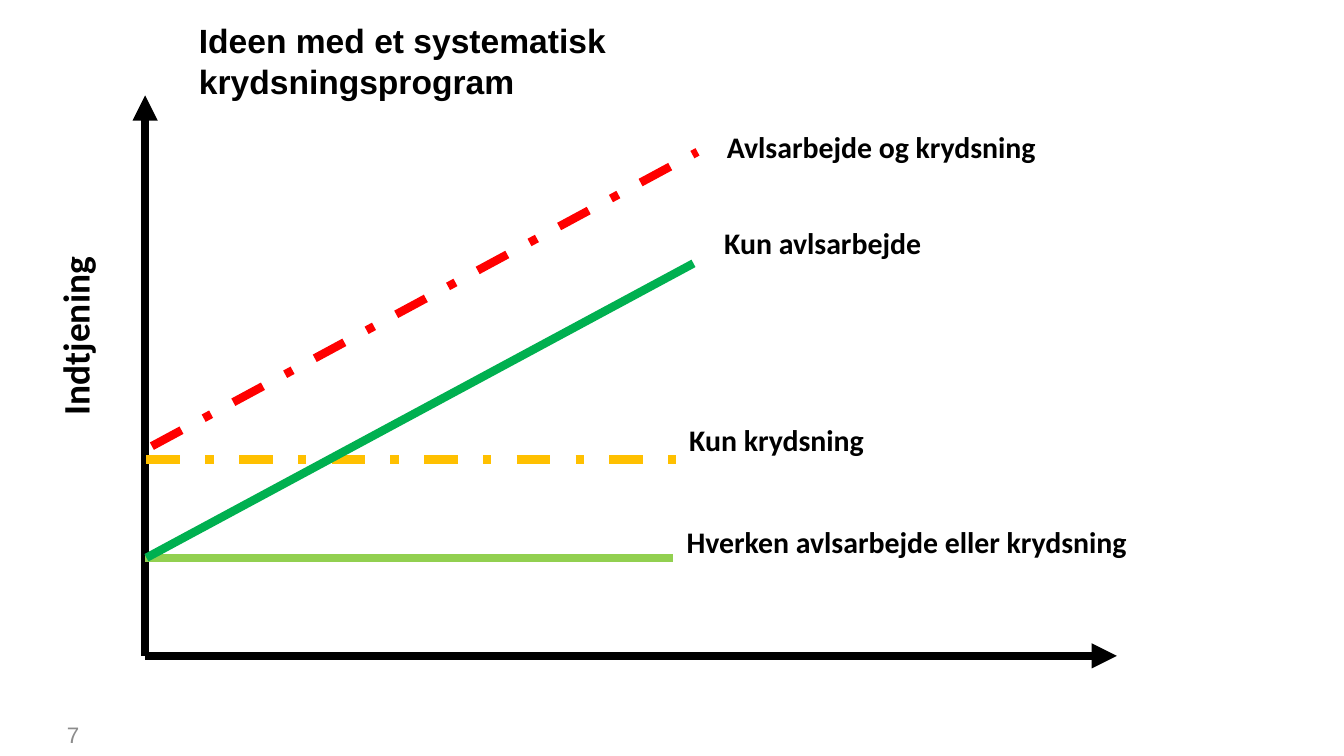
from pptx import Presentation
from pptx import util as u
from pptx.dml.color import RGBColor
from pptx.enum import dml, shapes, text
from pptx.oxml.ns import qn
from lxml import etree

BLACK = RGBColor(0x00, 0x00, 0x00)
WHITE = RGBColor(0xFF, 0xFF, 0xFF)
GREY = RGBColor(0x8C, 0x8C, 0x8C)
LIME = RGBColor(0x92, 0xD0, 0x50)
AMBER = RGBColor(0xFF, 0xC0, 0x00)
GREEN = RGBColor(0x00, 0xB0, 0x50)
RED = RGBColor(0xFF, 0x00, 0x00)

ORIGIN = (1.08, 4.88)
AXIS_ENDS = [(1.08, 0.71), (8.31, 4.88)]

# start, end, colour, dashed
TRENDS = [
    ((1.08, 4.15), (5.01, 4.15), LIME, False),
    ((1.09, 3.42), (5.03, 3.42), AMBER, True),
    ((1.09, 4.15), (5.16, 1.96), GREEN, False),
    ((1.13, 3.32), (5.19, 1.13), RED, True),
]

# wording, left, top, width, height
TREND_LABELS = [
    ("Avlsarbejde og krydsning", 5.31, 0.91, 3.5, 0.65),
    ("Kun avlsarbejde", 5.29, 1.62, 2.79, 0.65),
    ("Kun krydsning", 5.03, 3.09, 2.28, 0.65),
    ("Hverken avlsarbejde eller krydsning", 5.01, 3.85, 4.55, 0.79),
]


def add_span(para, wording, size, font, color=BLACK, bold=True):
    span = para.add_run()
    span.text = wording
    span.font.size = u.Pt(size)
    span.font.name = font
    span.font.bold = bold
    span.font.color.rgb = color


def add_line(slide, start, end, color, dashed=False, arrow=False):
    line = slide.shapes.add_connector(
        shapes.MSO_CONNECTOR.STRAIGHT, *map(u.Inches, start + end))
    line.line.width = u.Pt(4.5)
    line.line.color.rgb = color
    if dashed:
        line.line.dash_style = dml.MSO_LINE.DASH_DOT
    properties = line._element.spPr
    if arrow:
        etree.SubElement(properties.find(qn("a:ln")), qn("a:tailEnd"), type="triangle")
    etree.SubElement(properties, qn("a:effectLst"))


def add_label(slide, wording, left, top, width, height, size=16, upright=False):
    box = slide.shapes.add_shape(
        shapes.MSO_SHAPE.RECTANGLE, *map(u.Inches, (left, top, width, height)))
    box.shadow.inherit = False
    box.fill.solid()
    box.fill.fore_color.rgb = WHITE
    box.line.fill.background()
    frame = box.text_frame
    frame.word_wrap = True
    frame.vertical_anchor = text.MSO_ANCHOR.TOP
    if upright:
        frame.margin_left, frame.margin_top = u.Inches(0.03), u.Inches(0.1)
        frame._txBody.bodyPr.set("vert", "vert270")
    para = frame.paragraphs[0]
    para.alignment = text.PP_ALIGN.LEFT
    para.space_after = u.Pt(10)
    add_span(para, wording, size, "Calibri")


def set_title(slide, lines):
    title = slide.shapes.title
    title.left, title.top = u.Inches(1.38), u.Inches(0.1)
    title.width, title.height = u.Inches(5), u.Inches(0.71)
    frame = title.text_frame
    frame.word_wrap = True
    frame.auto_size = text.MSO_AUTO_SIZE.SHAPE_TO_FIT_TEXT
    frame.vertical_anchor = text.MSO_ANCHOR.TOP
    para = frame.paragraphs[0]
    para.alignment = text.PP_ALIGN.LEFT
    for index, wording in enumerate(lines):
        if index:
            para.add_line_break()
        add_span(para, wording, 18, "Arial")


def add_page_number(slide, number):
    box = slide.shapes.add_textbox(*map(u.Inches, (0, 5.32, 0.78, 0.3)))
    frame = box.text_frame
    frame.word_wrap = True
    frame.margin_right = u.Inches(0.19)
    para = frame.paragraphs[0]
    para.alignment = text.PP_ALIGN.RIGHT
    add_span(para, number, 12, "Arial", GREY, bold=False)


def main():
    deck = Presentation()
    # Widescreen, 16:9
    deck.slide_width = u.Inches(10)
    deck.slide_height = deck.slide_width * 9 // 16
    slide = deck.slides.add_slide(deck.slide_layouts.get_by_name("Title Only"))

    set_title(slide, ["Ideen med et systematisk", "krydsningsprogram"])
    add_page_number(slide, "7")

    # Axes
    for end in AXIS_ENDS:
        add_line(slide, ORIGIN, end, BLACK, arrow=True)

    # Earnings trends
    for start, end, color, dashed in TRENDS:
        add_line(slide, start, end, color, dashed)

    # Axis and trend labels
    add_label(slide, "Indtjening", 0.36, 1.24, 0.59, 1.95, size=20, upright=True)
    for label in TREND_LABELS:
        add_label(slide, *label)

    deck.save("out.pptx")


if __name__ == "__main__":
    main()
